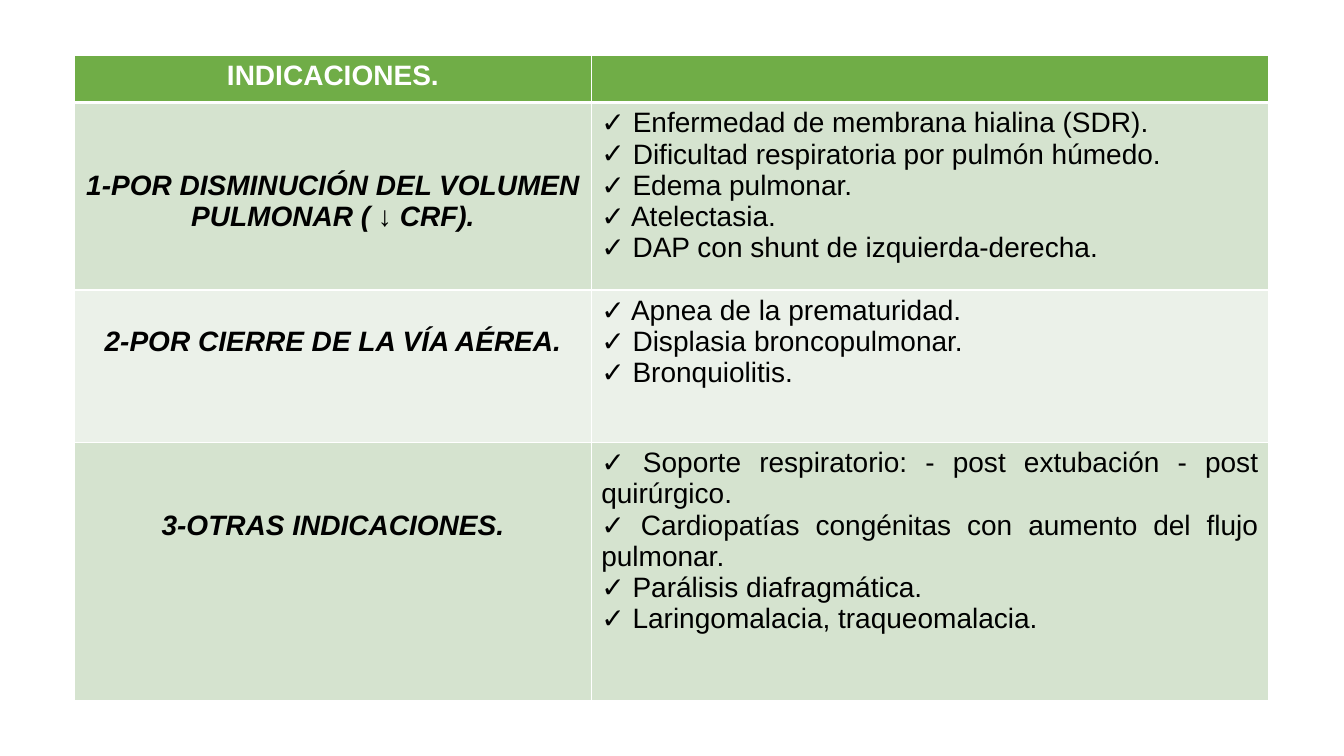
from lxml.etree import SubElement
from pptx import Presentation
from pptx.dml.color import RGBColor
from pptx.enum.text import PP_ALIGN as Align
from pptx.oxml.ns import qn
from pptx.util import Pt

FONT = "Arial"
TEXT_SIZE = 20
LINE_HEIGHT = 22.34
WHITE, BLACK = "FFFFFF", "000000"
HEADER_GREEN, BAND_DARK, BAND_LIGHT = "70AD47", "D5E3CF", "EBF1E9"
COLUMN_WIDTHS = [368.9, 484.1]
HEADER_HEIGHT = 33.6
HEADER_RULE, GRID_RULE = 3, 1

# label, lines the label is lowered by, row height, fill, items
INDICATIONS = [
    ("1-POR DISMINUCIÓN DEL VOLUMEN PULMONAR ( ↓ CRF).", 2, 134, BAND_DARK, [
        "Enfermedad de membrana hialina (SDR).",
        "Dificultad respiratoria por pulmón húmedo.",
        "✓ Edema pulmonar.",
        "✓ Atelectasia.",
        "✓ DAP con shunt de izquierda-derecha.",
    ]),
    ("2-POR CIERRE DE LA VÍA AÉREA.", 1, 108.7, BAND_LIGHT, [
        "✓ Apnea de la prematuridad.",
        "✓ Displasia broncopulmonar.",
        "✓ Bronquiolitis.",
    ]),
    ("3-OTRAS INDICACIONES.", 2, 184.3, BAND_DARK, [
        "✓ Soporte respiratorio: - post extubación - post quirúrgico.",
        "✓ Cardiopatías congénitas con aumento del flujo pulmonar.",
        "✓ Parálisis diafragmática.",
        "✓ Laringomalacia, traqueomalacia.",
    ]),
]


def color(value):
    return RGBColor.from_string(value)


def style_cell(cell, fill, top=GRID_RULE, bottom=GRID_RULE):
    """Give the cell white borders and a solid fill."""
    properties = cell._tc.get_or_add_tcPr()
    widths = {"lnL": GRID_RULE, "lnR": GRID_RULE, "lnT": top, "lnB": bottom}
    for tag, width in widths.items():
        line = SubElement(properties, qn(f"a:{tag}"), w=str(Pt(width)))
        solid = SubElement(line, qn("a:solidFill"))
        SubElement(solid, qn("a:srgbClr"), val=WHITE)
    cell.fill.solid()
    cell.fill.fore_color.rgb = color(fill)


def add_check_bullet(para, indent=22.5):
    properties = para._p.get_or_add_pPr()
    properties.set("marL", str(Pt(indent)))
    properties.set("indent", str(-Pt(indent)))
    SubElement(properties, qn("a:buFont"), typeface=FONT)
    SubElement(properties, qn("a:buChar"), char="✓")


def write_cell(cell, lines, align, text_color=BLACK, bold=False, italic=False):
    cell.text_frame.text = "\n".join(lines)
    for para in cell.text_frame.paragraphs:
        para.alignment = align
        if para.text and not para.text.startswith("✓"):
            if align == Align.JUSTIFY:
                add_check_bullet(para)
        font = para.font
        for span in para.runs:
            font = span.font
            font.name = FONT
            font.bold, font.italic = bold, italic
            font.color.rgb = color(text_color)
            font.size = Pt(TEXT_SIZE)
        font.size = Pt(TEXT_SIZE)


def add_indications_table(page, left, top):
    heights = [HEADER_HEIGHT] + [entry[2] for entry in INDICATIONS]
    table = page.shapes.add_table(
        len(heights), len(COLUMN_WIDTHS), Pt(left), Pt(top),
        Pt(sum(COLUMN_WIDTHS)), Pt(sum(heights))).table
    for column, width in zip(table.columns, COLUMN_WIDTHS):
        column.width = Pt(width)
    for row, height in zip(table.rows, heights):
        row.height = Pt(height)

    for cell in table.rows[0].cells:
        style_cell(cell, HEADER_GREEN, bottom=HEADER_RULE)
    write_cell(table.cell(0, 0), ["INDICACIONES."], Align.CENTER, WHITE, bold=True)

    for index, (label, lowered, _, fill, items) in enumerate(INDICATIONS, 1):
        label_cell, items_cell = table.rows[index].cells
        for cell in (label_cell, items_cell):
            style_cell(cell, fill, top=HEADER_RULE if index == 1 else GRID_RULE)
        label_cell.margin_top = Pt(3.6 + lowered * LINE_HEIGHT)
        write_cell(label_cell, [label], Align.CENTER, bold=True, italic=True)
        write_cell(items_cell, items, Align.JUSTIFY)


def main():
    deck = Presentation()
    deck.slide_width, deck.slide_height = Pt(960), Pt(540)
    page = deck.slides.add_slide(deck.slide_layouts[6])
    add_indications_table(page, 53.4, 39.6)
    deck.save("out.pptx")


if __name__ == "__main__":
    main()
